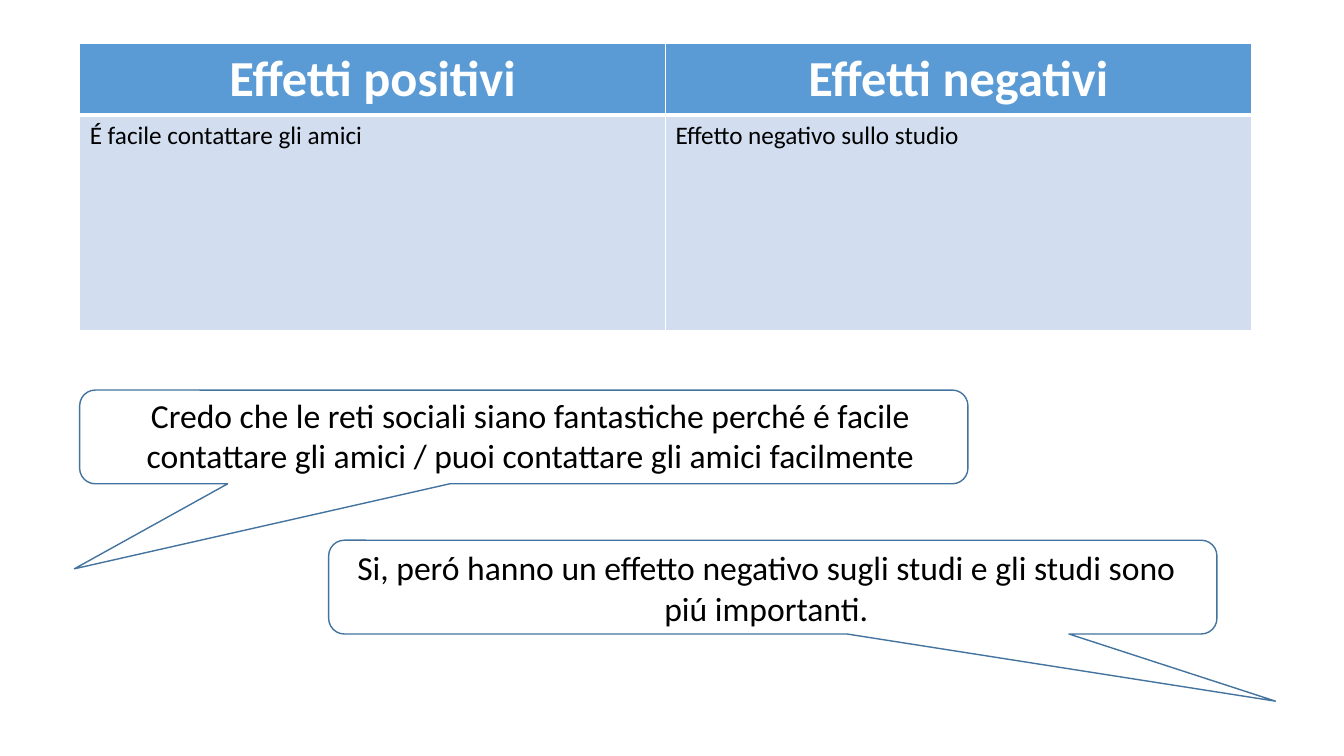
from dataclasses import dataclass

from lxml import etree
from pptx import Presentation
from pptx.dml.color import RGBColor
from pptx.enum.shapes import MSO_SHAPE
from pptx.enum.text import MSO_AUTO_SIZE, PP_ALIGN
from pptx.oxml.ns import qn
from pptx.util import Inches, Pt

CALLOUT = MSO_SHAPE.ROUNDED_RECTANGULAR_CALLOUT
FIT = MSO_AUTO_SIZE.SHAPE_TO_FIT_TEXT
CENTER = PP_ALIGN.CENTER
LEFT = PP_ALIGN.LEFT

FONT = "Calibri"
WHITE, BLACK = "FFFFFF", "000000"
COL_WIDTH = 5.81


@dataclass
class Row:
    height: float
    texts: tuple[str, str]
    size: int
    color: str
    fill: str
    bold: bool
    align: PP_ALIGN
    edges: dict[str, int]


@dataclass
class Bubble:
    left: float
    top: float
    tip: tuple[float, float]


@dataclass
class Speech:
    left: float
    top: float
    text: str


ROWS = [
    Row(0.7, ("Effetti positivi", "Effetti negativi"), 36, WHITE, "5B9BD5",
        True, CENTER, {"lnL": 1, "lnR": 1, "lnT": 1, "lnB": 3}),
    Row(2.14, ("É facile contattare gli amici", "Effetto negativo sullo studio"),
        18, BLACK, "D2DEEF", False, LEFT,
        {"lnL": 1, "lnR": 1, "lnT": 3, "lnB": 1}),
]

TALK = [
    Bubble(0.79, 3.87, (-0.506, 1.407)),
    Speech(0.92, 3.87, "Credo che le reti sociali siano fantastiche perché é facile "
           "contattare gli amici / puoi contattare gli amici facilmente"),
    Speech(3.26, 5.38, "Si, peró hanno un effetto negativo sugli studi e gli studi "
           "sono piú importanti."),
    Bubble(3.26, 5.36, (0.566, 1.217)),
]


def rgb(code: str) -> RGBColor:
    return RGBColor.from_string(code)


def write(frame, text: str, size: int, color: str, align: PP_ALIGN,
          bold: bool = False) -> None:
    para = frame.paragraphs[0]
    para.alignment = align
    run = para.add_run()
    run.text = text
    font = run.font
    font.name, font.size, font.bold = FONT, Pt(size), bold
    font.color.rgb = rgb(color)


def add_edges(cell, edges: dict[str, int]) -> None:
    """Give a cell white borders; must come before its fill."""
    props = cell._tc.get_or_add_tcPr()
    for tag, width in edges.items():
        line = etree.SubElement(props, qn(f"a:{tag}"), w=str(Pt(width)))
        fill = etree.SubElement(line, qn("a:solidFill"))
        etree.SubElement(fill, qn("a:srgbClr"), val=WHITE)


def add_table(slide, left: float, top: float) -> None:
    height = sum(row.height for row in ROWS)
    table = slide.shapes.add_table(
        len(ROWS), 2, Inches(left), Inches(top),
        Inches(2 * COL_WIDTH), Inches(height)).table
    for col in table.columns:
        col.width = Inches(COL_WIDTH)
    for r, row in enumerate(ROWS):
        table.rows[r].height = Inches(row.height)
        for c, text in enumerate(row.texts):
            cell = table.cell(r, c)
            add_edges(cell, row.edges)
            cell.fill.solid()
            cell.fill.fore_color.rgb = rgb(row.fill)
            write(cell.text_frame, text, row.size, row.color, row.align, row.bold)


def add_bubble(slide, item: Bubble) -> None:
    shape = slide.shapes.add_shape(
        CALLOUT, Inches(item.left), Inches(item.top), Inches(8.81), Inches(0.93))
    shape.adjustments[0], shape.adjustments[1] = item.tip
    shape.shadow.inherit = False
    shape.fill.background()
    shape.line.color.rgb = rgb("43739E")
    shape.line.width = Pt(1)


def add_speech(slide, item: Speech) -> None:
    box = slide.shapes.add_textbox(
        Inches(item.left), Inches(item.top), Inches(8.68), Inches(0.91))
    frame = box.text_frame
    frame.word_wrap = True
    frame.auto_size = FIT
    write(frame, item.text, 24, BLACK, CENTER)


def main() -> None:
    deck = Presentation()
    deck.slide_width, deck.slide_height = Inches(13.33), Inches(7.5)
    slide = deck.slides.add_slide(deck.slide_layouts[6])
    add_table(slide, 0.79, 0.43)
    for item in TALK:
        if isinstance(item, Bubble):
            add_bubble(slide, item)
        else:
            add_speech(slide, item)
    deck.save("out.pptx")


if __name__ == "__main__":
    main()
